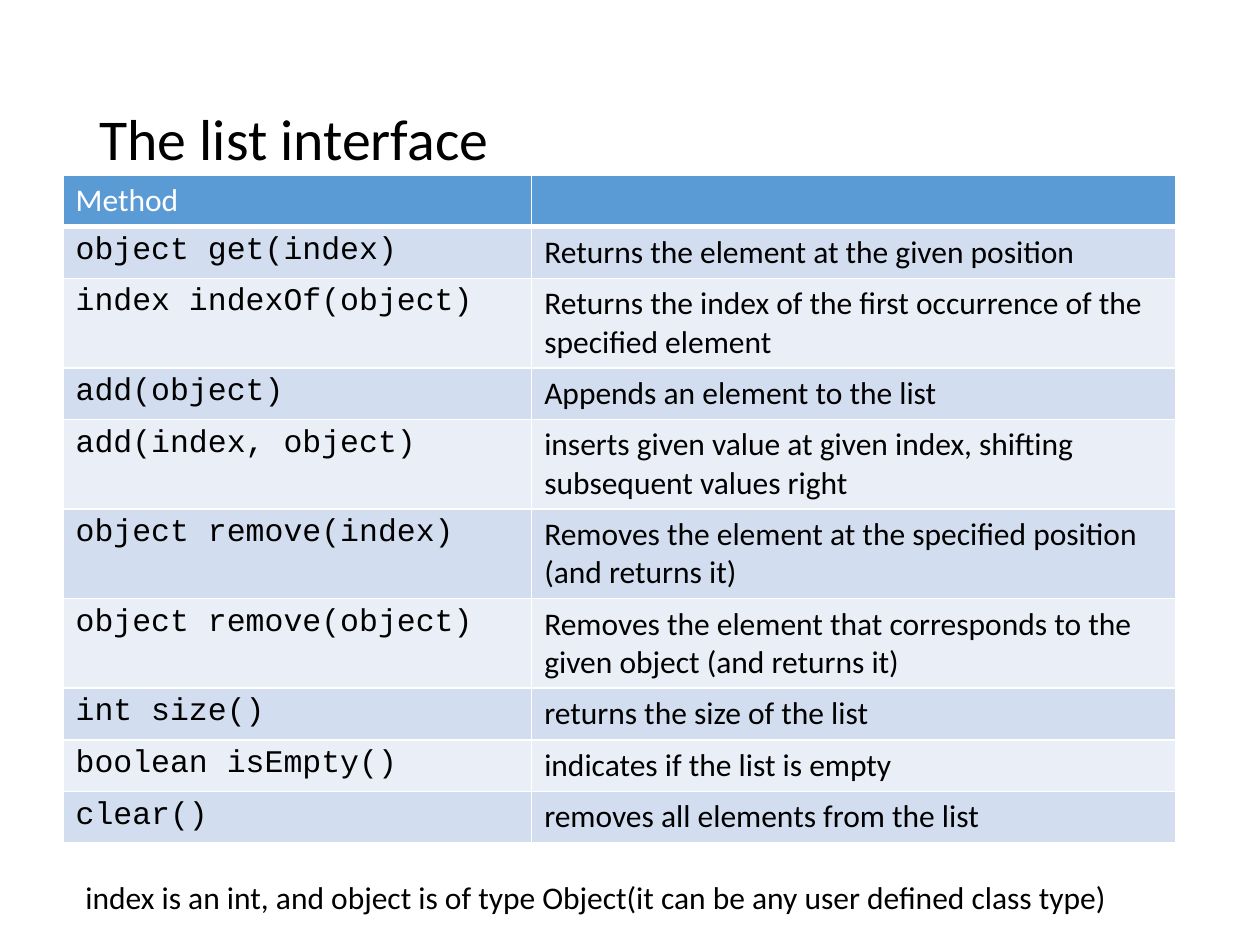
from lxml.etree import SubElement
from pptx import Presentation
from pptx.dml.color import RGBColor
from pptx.enum.text import MSO_ANCHOR, PP_ALIGN
from pptx.oxml.ns import qn
from pptx.util import Inches, Pt

BODY_FONT = "Calibri"
CODE_FONT = "Courier New"
BLACK = "000000"
WHITE = "FFFFFF"
HEADER_FILL = "5B9BD5"
BAND_FILLS = ["D2DEEF", "EAEFF7"]
COLUMN_WIDTHS = [3.72, 5.11]
ROW_HEIGHT = 0.41
METHODS = [
    ("Method", ""),
    ("object get(index)", "Returns the element at the given position"),
    ("index indexOf(object)", "Returns the index of the first occurrence of the specified element"),
    ("add(object)", "Appends an element to the list"),
    ("add(index, object)", "inserts given value at given index, shifting subsequent values right"),
    ("object remove(index)", "Removes the element at the specified position (and returns it)"),
    ("object remove(object)", "Removes the element that corresponds to the given object (and returns it)"),
    ("int size()", "returns the size of the list"),
    ("boolean isEmpty()", "indicates if the list is empty"),
    ("clear()", "removes all elements from the list"),
]


def rgb(color):
    return RGBColor.from_string(color)


def set_text(text_frame, text, size, font=BODY_FONT, color=BLACK):
    text_frame.text = text
    paragraph = text_frame.paragraphs[0]
    paragraph.font.size = Pt(size)
    for run in paragraph.runs:
        run.font.name = font
        run.font.size = Pt(size)
        run.font.bold = False
        run.font.color.rgb = rgb(color)
    return paragraph


def set_borders(cell, top, bottom):
    properties = cell._tc.get_or_add_tcPr()
    for side, width in (("L", 1), ("R", 1), ("T", top), ("B", bottom)):
        line = SubElement(properties, qn(f"a:ln{side}"), w=str(Pt(width)))
        fill = SubElement(line, qn("a:solidFill"))
        SubElement(fill, qn("a:srgbClr"), val=WHITE)


def add_title(slide, text):
    title = slide.shapes.title
    title.left, title.top = Inches(0.69), Inches(0.4)
    title.width, title.height = Inches(8.62), Inches(1.45)
    title.text_frame.vertical_anchor = MSO_ANCHOR.MIDDLE
    paragraph = set_text(title.text_frame, text, 33)
    paragraph.alignment = PP_ALIGN.LEFT
    paragraph.line_spacing = 0.9


def add_method_table(slide):
    frame = slide.shapes.add_table(
        len(METHODS), len(COLUMN_WIDTHS), Inches(0.5), Inches(1.39),
        Inches(sum(COLUMN_WIDTHS)), Inches(ROW_HEIGHT * len(METHODS)))
    table = frame.table
    for column, width in zip(table.columns, COLUMN_WIDTHS):
        column.width = Inches(width)
    for row_index, texts in enumerate(METHODS):
        table.rows[row_index].height = Inches(ROW_HEIGHT)
        is_header = row_index == 0
        fill = HEADER_FILL if is_header else BAND_FILLS[(row_index - 1) % 2]
        color = WHITE if is_header else BLACK
        for column_index, text in enumerate(texts):
            cell = table.cell(row_index, column_index)
            is_code = column_index == 0 and not is_header
            set_text(cell.text_frame, text, 18, CODE_FONT if is_code else BODY_FONT, color)
            set_borders(cell, 3 if row_index == 1 else 1, 3 if is_header else 1)
            cell.fill.solid()
            cell.fill.fore_color.rgb = rgb(fill)


def add_note(slide, text):
    box = slide.shapes.add_textbox(Inches(0.58), Inches(6.92), Inches(8.33), Inches(0.4))
    box.text_frame.word_wrap = False
    set_text(box.text_frame, text, 18)


def main():
    presentation = Presentation()
    presentation.slide_width = Inches(10)
    presentation.slide_height = Inches(7.5)
    slide = presentation.slides.add_slide(presentation.slide_layouts[5])
    add_title(slide, "The list interface")
    add_method_table(slide)
    add_note(slide, "index is an int, and object is of type Object(it can be any user defined class type)")
    presentation.save("out.pptx")


if __name__ == "__main__":
    main()
